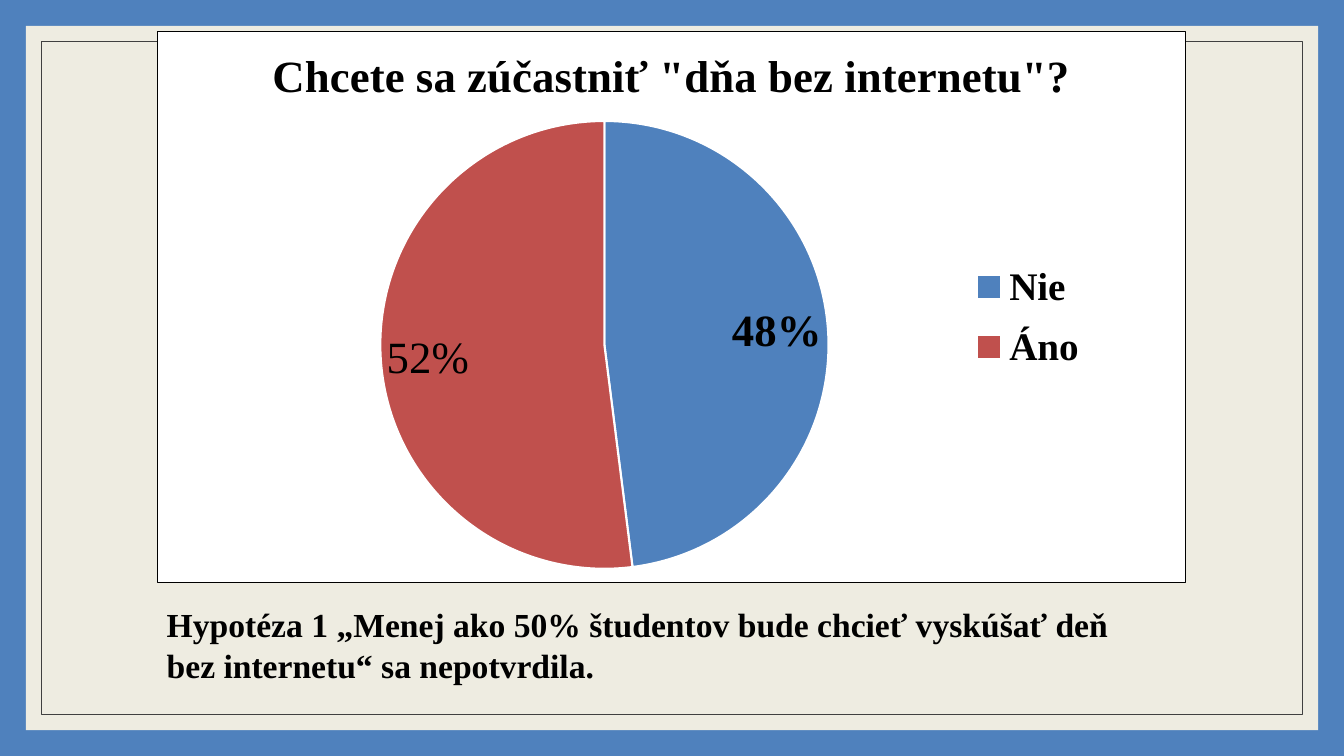
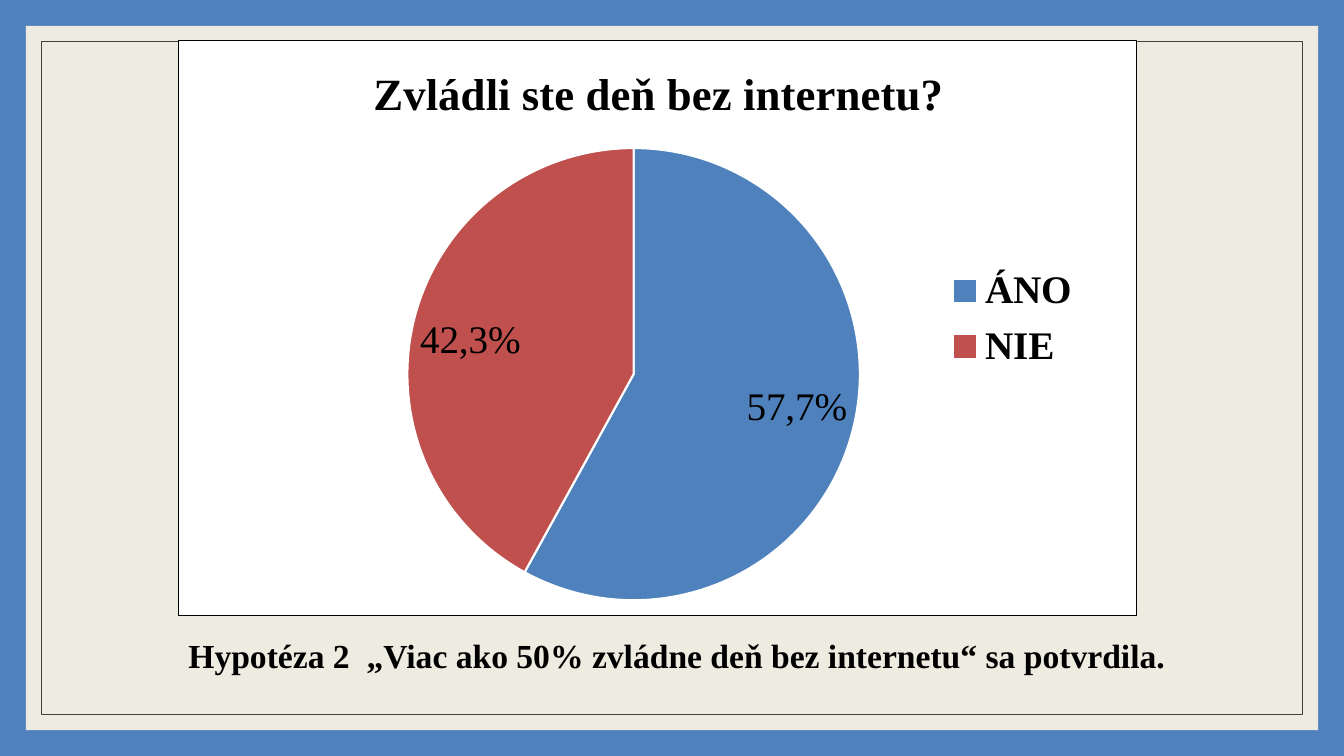
"""Build two survey slides, each with a pie chart and a verdict on its hypothesis."""
import lxml.etree
import pptx
import pptx.chart.data
import pptx.dml.color
import pptx.enum.chart
import pptx.enum.shapes
import pptx.enum.text
import pptx.oxml
import pptx.oxml.ns
import pptx.util

Pt = pptx.util.Pt
RGB = pptx.dml.color.RGBColor.from_string
qn = pptx.oxml.ns.qn

THEME = {
    "blue": "4F81BD", "red": "C0504D", "paper": "EEECE1", "white": "FFFFFF",
    "black": "000000", "rule": "404040", "font": "Times New Roman",
    "title": 32, "legend": 28, "body": 24, "base": 10,
}


def set_font(font, size, bold=True):
    """Apply the shared typeface and colour."""
    for name, value in {"name": THEME["font"], "size": Pt(size), "bold": bold}.items():
        setattr(font, name, value)
    font.color.rgb = RGB(THEME["black"])


def set_layout(el, box, inner=False):
    """Place a chart part by percentages of the chart area."""
    for old in el.findall(qn("c:layout")):
        el.remove(old)
    layout = lxml.etree.Element(qn("c:layout"))
    manual = lxml.etree.SubElement(layout, qn("c:manualLayout"))
    if inner:
        lxml.etree.SubElement(manual, qn("c:layoutTarget")).set("val", "inner")
    for tag in ("xMode", "yMode"):
        lxml.etree.SubElement(manual, qn("c:" + tag)).set("val", "edge")
    for tag, value in zip("xywh", box):
        lxml.etree.SubElement(manual, qn("c:" + tag)).set("val", str(value / 100))
    overlay = el.find(qn("c:overlay"))
    el.insert(0 if overlay is None else el.index(overlay), layout)


slides = [
    {
        "title": 'Chcete sa zúčastniť "dňa bez internetu"?',
        "cats": ["Nie", "Áno"], "vals": [48, 52],
        "labels": {1: "52%"}, "label_size": 32,
        "chart": (112, 22, 735, 394.5), "title_at": (10.4, 1.5),
        "pie": (21.7, 16.2, 43.6, 81.4), "legend": (78.2, 39.5, 13, 24.7),
        "text": "Hypotéza 1 „Menej ako 50% študentov bude chcieť vyskúšať deň\vbez internetu“ sa nepotvrdila.",
        "text_at": (112, 428, 735, 65.5),
    },
    {
        "title": "Zvládli ste deň bez internetu?",
        "cats": ["ÁNO", "NIE"], "vals": [58, 42],
        "labels": {0: "57,7%", 1: "42,3%"}, "label_size": 28,
        "chart": (127, 28.5, 685.5, 411.5), "title_at": (19.5, 3),
        "pie": (23.9, 18.7, 47.2, 78.7), "legend": (80, 37.6, 14, 21.6),
        "text": "Hypotéza 2  „Viac ako 50% zvládne deň bez internetu“ sa potvrdila.",
        "text_at": (127.5, 450, 715, 65.5),
    },
]
frames = [(18.5, THEME["paper"], None), (29.5, None, THEME["rule"])]

prs = pptx.Presentation()
prs.slide_width, prs.slide_height = Pt(960), Pt(540)
bg = prs.slide_master.background.fill
bg.solid()
bg.fore_color.rgb = RGB(THEME["blue"])

for spec in slides:
    s = prs.slides.add_slide(prs.slide_layouts[6])

    for inset, fill, line in frames:
        sp = s.shapes.add_shape(
            pptx.enum.shapes.MSO_SHAPE.RECTANGLE, Pt(inset), Pt(inset),
            Pt(960 - 2 * inset), Pt(540 - 2 * inset))
        sp.shadow.inherit = False
        if fill:
            sp.fill.solid()
            sp.fill.fore_color.rgb = RGB(fill)
        else:
            sp.fill.background()
        if line:
            sp.line.color.rgb = RGB(line)
            sp.line.width = Pt(0.5)
        else:
            sp.line.fill.background()

    data = pptx.chart.data.CategoryChartData()
    data.categories = spec["cats"]
    data.add_series("Series 1", spec["vals"])
    chart = s.shapes.add_chart(
        pptx.enum.chart.XL_CHART_TYPE.PIE, *map(Pt, spec["chart"]), data).chart
    set_font(chart.font, THEME["base"], False)

    chart.has_title = True
    p = chart.chart_title.text_frame.paragraphs[0]
    r = p.add_run()
    r.text = spec["title"]
    set_font(r.font, THEME["title"])

    chart.has_legend = True
    chart.legend.position = pptx.enum.chart.XL_LEGEND_POSITION.RIGHT
    chart.legend.include_in_layout = False
    set_font(chart.legend.font, THEME["legend"])

    plot = chart.plots[0]
    plot.vary_by_categories = True
    series = plot.series[0]
    for i, colour in enumerate((THEME["blue"], THEME["red"])):
        fmt = series.points[i].format
        fmt.fill.solid()
        fmt.fill.fore_color.rgb = RGB(colour)
        fmt.line.color.rgb = RGB(THEME["white"])
        fmt.line.width = Pt(1.5)

    inside_end = pptx.enum.chart.XL_LABEL_POSITION.INSIDE_END
    labels = series.data_labels
    for name, value in {"show_percentage": True, "show_value": False, "number_format": "0%",
                        "number_format_is_linked": False, "position": inside_end}.items():
        setattr(labels, name, value)
    set_font(labels.font, spec["label_size"])
    for i, text in spec["labels"].items():
        label = series.points[i].data_label
        r = label.text_frame.paragraphs[0].add_run()
        r.text = text
        set_font(r.font, spec["label_size"], False)
        label.position = inside_end

    body = chart._chartSpace.find(qn("c:chart"))
    set_layout(body.find(qn("c:title")), spec["title_at"])
    set_layout(body.find(qn("c:plotArea")), spec["pie"], inner=True)
    set_layout(body.find(qn("c:legend")), spec["legend"])
    body.addnext(pptx.oxml.parse_xml(
        f'<c:spPr {pptx.oxml.ns.nsdecls("c", "a")}>'
        f'<a:solidFill><a:srgbClr val="{THEME["white"]}"/></a:solidFill>'
        f'<a:ln w="{Pt(0.75)}"><a:solidFill><a:srgbClr val="{THEME["black"]}"/></a:solidFill></a:ln>'
        '</c:spPr>'))

    tf = s.shapes.add_textbox(*map(Pt, spec["text_at"])).text_frame
    tf.word_wrap = True
    tf.auto_size = pptx.enum.text.MSO_AUTO_SIZE.SHAPE_TO_FIT_TEXT
    p = tf.paragraphs[0]
    p.text = spec["text"]
    for r in p.runs:
        set_font(r.font, THEME["body"])

prs.save("out.pptx")
